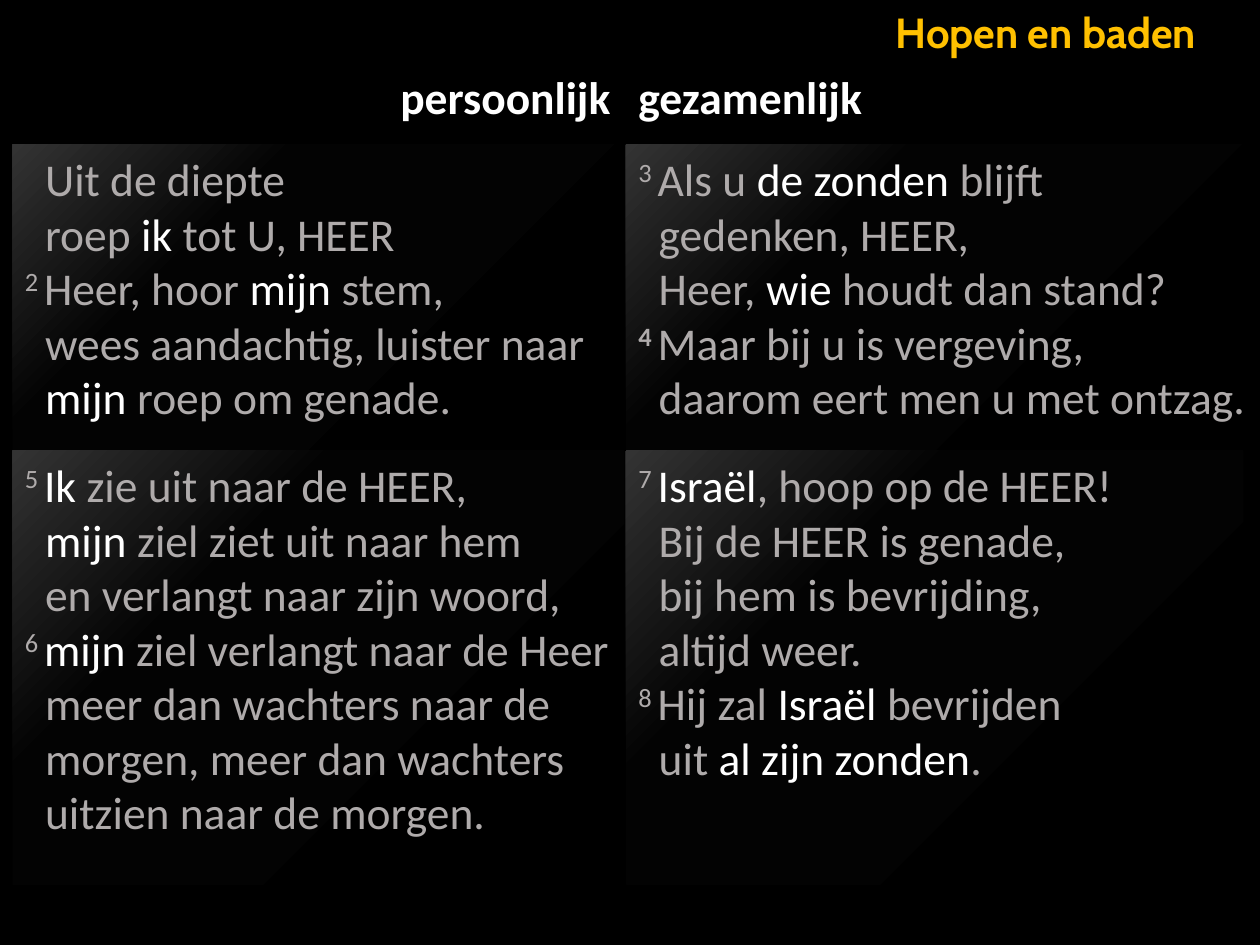
import copy

import pptx
import pptx.dml.color
import pptx.enum.shapes
import pptx.enum.text
import pptx.util
from pptx.util import Cm

BLACK = pptx.dml.color.RGBColor(0x00, 0x00, 0x00)
NEAR_BLACK = pptx.dml.color.RGBColor(0x03, 0x03, 0x03)
CHARCOAL = pptx.dml.color.RGBColor(0x33, 0x33, 0x33)
GREY = pptx.dml.color.RGBColor(0xAF, 0xAB, 0xAB)
WHITE = pptx.dml.color.RGBColor(0xFF, 0xFF, 0xFF)
GOLD = pptx.dml.color.RGBColor(0xFF, 0xC0, 0x00)

HANGING_INDENT = Cm(0.41)


def add_text(paragraph, text, font="Calibri", size=26, color=WHITE, bold=False, baseline=0):
    """Add text to a paragraph; each newline becomes a line break."""
    for index, line in enumerate(text.split("\n")):
        if index:
            paragraph.add_line_break()
        if not line:
            continue
        run = paragraph.add_run()
        run.text = line
        run.font.name = font
        run.font.size = pptx.util.Pt(size)
        run.font.bold = bold
        run.font.color.rgb = color
        if baseline:
            run.font._element.set("baseline", str(baseline * 1000))


def prepare_frame(shape):
    """Give a shape a wrapped, top-left text frame and return it."""
    frame = shape.text_frame
    frame.word_wrap = True
    frame.auto_size = pptx.enum.text.MSO_AUTO_SIZE.NONE
    frame.vertical_anchor = pptx.enum.text.MSO_ANCHOR.TOP
    frame.paragraphs[0].alignment = pptx.enum.text.PP_ALIGN.LEFT
    return frame


presentation = pptx.Presentation()
presentation.slide_width = Cm(25.4)
presentation.slide_height = Cm(19.05)
slide = presentation.slides.add_slide(presentation.slide_layouts[5])
slide.background.fill.solid()
slide.background.fill.fore_color.rgb = BLACK

# Title
title = slide.shapes.title
title.left, title.top, title.width, title.height = Cm(17.8), Cm(0), Cm(7.6), Cm(1.27)
add_text(prepare_frame(title).paragraphs[0], "Hopen en baden",
         font="Cabin", size=24, color=GOLD, bold=True)

# Verse panels: left, top, width, height and verses as (number, bold number, text);
# words between bars are highlighted
left_column, right_column = 0.25, 12.62
top_row, bottom_row = 2.92, 9.09
panels = [
    (left_column, top_row, 12.34, 6.17, [
        ("", False, "Uit de diepte\nroep |ik |tot U, HEER"),
        ("2", False, "Heer, hoor |mijn |stem,\nwees aandachtig, luister naar\n"
                     "|mijn |roep om genade."),
    ]),
    (right_column, top_row, 12.78, 6.17, [
        ("3", False, "Als u |de zonden |blijft\ngedenken, HEER,\n"
                     "Heer, |wie |houdt dan stand?"),
        ("4", True, "Maar bij u is vergeving,\ndaarom eert men u met ontzag."),
    ]),
    (left_column, bottom_row, 12.34, 8.74, [
        ("5", False, "|Ik |zie uit naar de HEER,\n|mijn |ziel ziet uit naar hem\n"
                     "en verlangt naar zijn woord,"),
        ("6", False, "|mijn |ziel verlangt naar de Heer\nmeer dan wachters naar de\n"
                     "morgen, meer dan wachters\nuitzien naar de morgen."),
    ]),
    (right_column, bottom_row, 12.45, 8.74, [
        ("7", False, "|Israël|, hoop op de HEER!\nBij de HEER is genade,\n"
                     "bij hem is bevrijding,\naltijd weer."),
        ("8", False, "Hij zal |Israël |bevrijden\nuit |al zijn zonden|."),
    ]),
]

for left, top, width, height, verses in panels:
    panel = slide.shapes.add_shape(pptx.enum.shapes.MSO_SHAPE.RECTANGLE,
                                   Cm(left), Cm(top), Cm(width), Cm(height))
    panel.shadow.inherit = False
    panel.line.fill.background()

    # Three-stop gradient, lightest in the top left corner
    panel.fill.gradient()
    panel.fill.gradient_angle = 135
    first_stop = panel._element.spPr.find(".//" + pptx.oxml.ns.qn("a:gs"))
    first_stop.addnext(copy.deepcopy(first_stop))
    stops = [(0, BLACK), (0.69, NEAR_BLACK), (1, CHARCOAL)]
    for stop, (position, color) in zip(panel.fill.gradient_stops, stops):
        stop.position = position
        stop.color.rgb = color

    # Verses, with the number hanging before the text
    frame = prepare_frame(panel)
    for index, (number, bold_number, text) in enumerate(verses):
        paragraph = frame.add_paragraph() if index else frame.paragraphs[0]
        paragraph.alignment = pptx.enum.text.PP_ALIGN.LEFT
        properties = paragraph._p.get_or_add_pPr()
        properties.set("marL", str(HANGING_INDENT))
        if number:
            properties.set("indent", str(-HANGING_INDENT))
            add_text(paragraph, number + " ", color=GREY, bold=bold_number, baseline=30)
        for part_index, part in enumerate(text.split("|")):
            add_text(paragraph, part, color=WHITE if part_index % 2 else GREY)

# Column headings
for left, width, heading in [(7.82, 4.8, "persoonlijk"), (right_column, 5.08, "gezamenlijk")]:
    box = slide.shapes.add_textbox(Cm(left), Cm(1.27), Cm(width), Cm(1.37))
    add_text(prepare_frame(box).paragraphs[0], heading, bold=True)

presentation.save("out.pptx")
